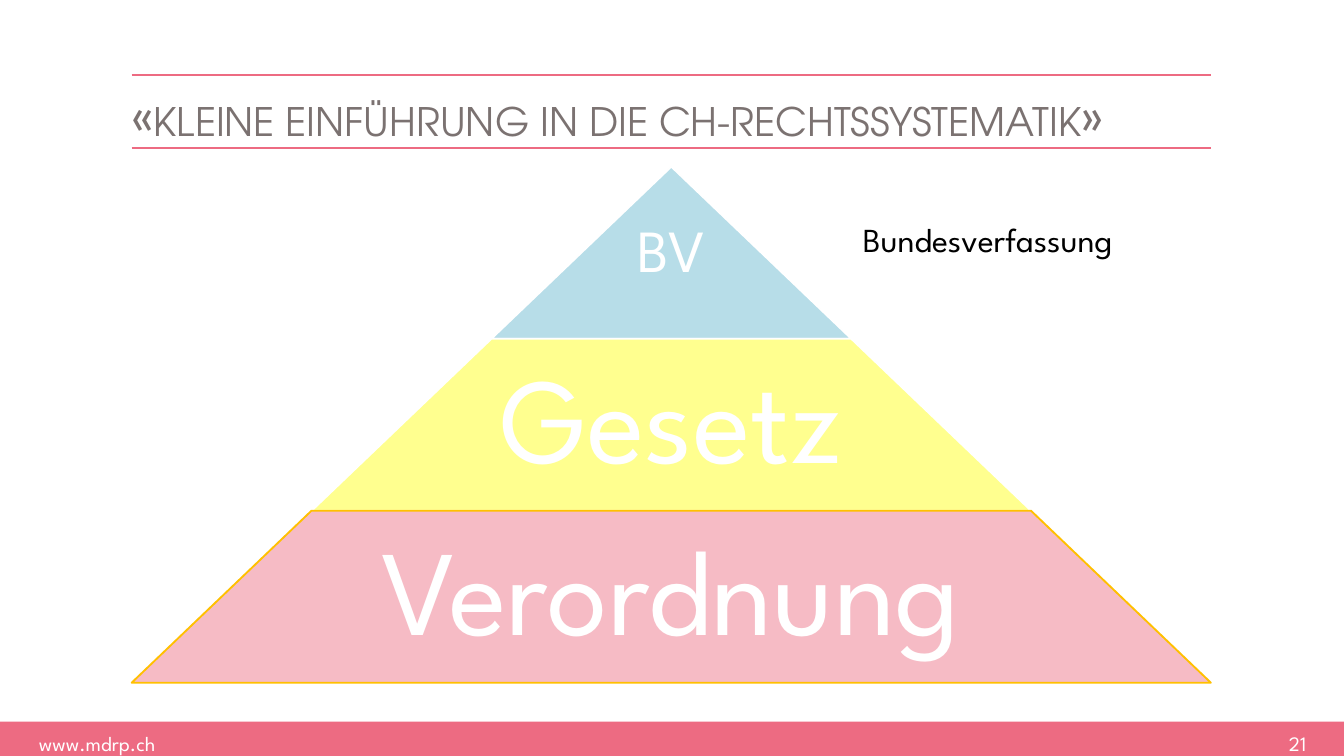
from lxml import etree
from pptx import Presentation, util as u
from pptx.dml.color import RGBColor
from pptx.enum import shapes, text
from pptx.oxml.ns import qn

PX = 9144
FONT = "League Spartan"
HEAD = "TeX Gyre Adventor"
ROSE = "ED6B82"
LEFT, WIDE, TALL, TOP = 98, 803, 128, 124
TIERS = [
    ("BV", 32, 4, 268, "4BACC6", 40, "FFFFFF"),
    ("Gesetz", 65, 9, 348, "FFFF00", 44, "FFFFFF"),
    ("Verordnung", 65, 9, 522, ROSE, 46, "FFC000"),
]


def px(n):
    return u.Emu(round(n * PX))


def color(code):
    return RGBColor.from_string(code)


def add_text(slide, box, runs, size=11, font=FONT, ink="FFFFFF", align="LEFT",
             anchor="TOP", inset=0, space=None):
    frame = slide.shapes.add_textbox(*map(px, box)).text_frame
    frame.word_wrap = True
    frame.vertical_anchor = getattr(text.MSO_ANCHOR, anchor)
    frame.margin_left = frame.margin_right = px(inset)
    frame.margin_top = frame.margin_bottom = px(inset)
    para = frame.paragraphs[0]
    para.alignment = getattr(text.PP_ALIGN, align)
    para.line_spacing = space
    if isinstance(runs, str):
        runs = [(runs, size)]
    for words, points in runs:
        run = para.add_run()
        run.text = words
        run.font.size = u.Pt(points)
        run.font.name = font
        run.font.color.rgb = color(ink)


def add_shape(slide, kind, box, fill, line=None, alpha=100):
    shape = slide.shapes.add_shape(kind, *map(px, box))
    shape.shadow.inherit = False
    shape.fill.solid()
    shape.fill.fore_color.rgb = color(fill)
    if alpha < 100:
        tone = shape.fill._xPr.find(qn("a:solidFill"))[0]
        etree.SubElement(tone, qn("a:alpha")).set("val", str(alpha * 1000))
    if line:
        shape.line.color.rgb = color(line)
        shape.line.width = u.Pt(1)
    else:
        shape.line.fill.background()
    return shape


def add_rule(slide, y):
    rule = slide.shapes.add_connector(
        shapes.MSO_CONNECTOR.STRAIGHT, px(LEFT), px(y), px(LEFT + WIDE), px(y))
    rule.line.color.rgb = color(ROSE)
    rule.line.width = u.Pt(1)
    etree.SubElement(rule._element.spPr, qn("a:effectLst"))


def add_tier(slide, i, name, size, inset, span, fill, alpha, line):
    mid = LEFT + WIDE / 2
    wide = WIDE * (i + 1) / len(TIERS)
    y = TOP + i * TALL
    tier = add_shape(slide, shapes.MSO_SHAPE.TRAPEZOID,
                     (mid - wide / 2, y, wide, TALL), fill, line, alpha)
    tier.adjustments[0] = WIDE / (2 * len(TIERS) * TALL)
    add_text(slide, (mid - span / 2, y, span, TALL), name, size=size,
             align="CENTER", anchor="MIDDLE", inset=inset, space=0.9)


def main():
    deck = Presentation()
    deck.slide_width, deck.slide_height = px(1000), px(562.5)
    slide = deck.slides.add_slide(deck.slide_layouts[6])
    add_shape(slide, shapes.MSO_SHAPE.RECTANGLE, (0, 537, 1000, 26), ROSE)
    add_text(slide, (29, 544, 102, 19), "www.mdrp.ch")
    for y in (56, 110):
        add_rule(slide, y)
    title = [("«", 28), ("KLEINE EINFÜHRUNG IN DIE CH-RECHTSSYSTEMATIK", 21), ("»", 28)]
    add_text(slide, (LEFT, 56, WIDE, 52), title, font=HEAD, ink="7B7271", space=1.14)
    add_text(slide, (911, 544, 61, 14), "21", align="RIGHT")
    for i, tier in enumerate(TIERS):
        add_tier(slide, i, *tier)
    add_text(slide, (642, 163, 214, 30), "Bundesverfassung", size=18, ink="000000")
    deck.save("out.pptx")


if __name__ == "__main__":
    main()
